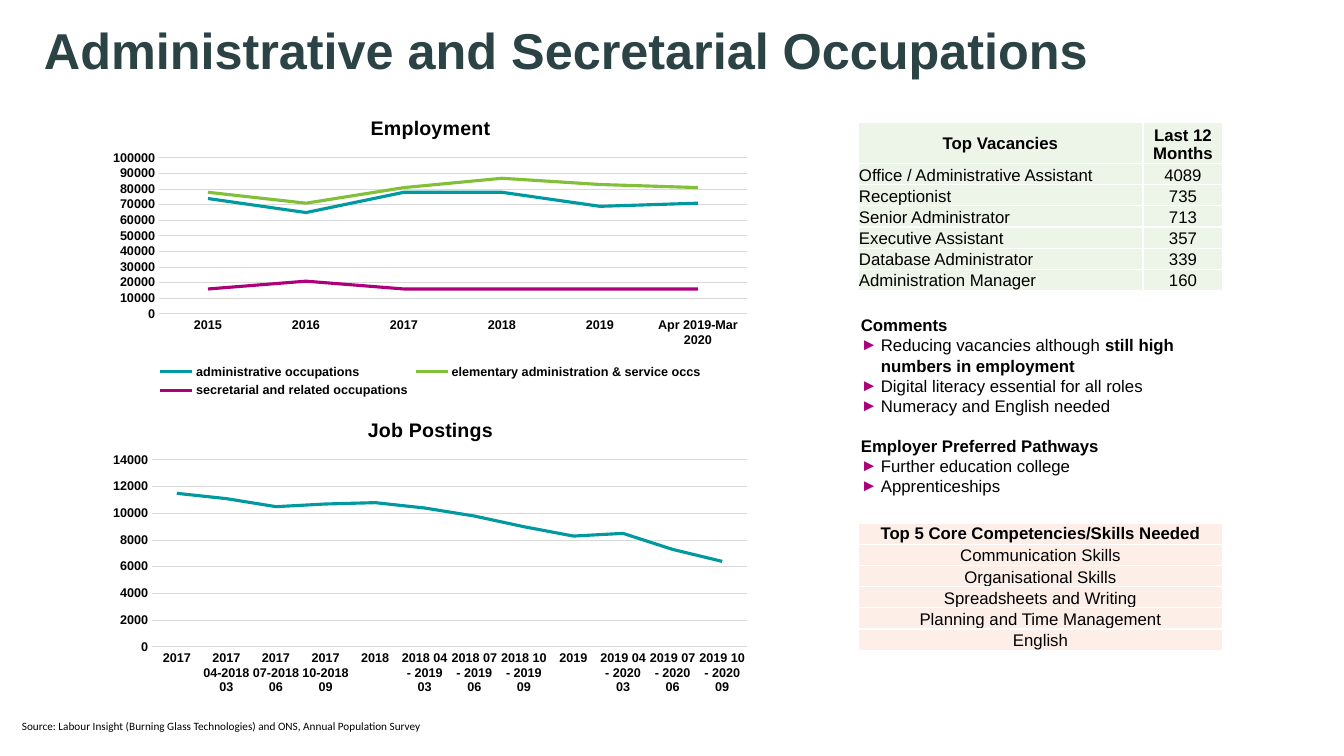
from lxml.etree import SubElement
from pptx import Presentation
from pptx.chart.data import CategoryChartData
from pptx.dml.color import RGBColor
from pptx.enum.chart import XL_CHART_TYPE, XL_LEGEND_POSITION, XL_TICK_MARK
from pptx.enum.text import MSO_ANCHOR, PP_ALIGN
from pptx.oxml import parse_xml
from pptx.oxml.ns import nsdecls, qn
from pptx.util import Pt

PX = 914400 / 100.8
COLOURS = {
    "title": "2B4345", "text": "000000", "teal": "0099A0", "green": "81C038",
    "magenta": "AD007A", "grid": "D9D9D9", "border": "FFFFFF",
    "vacancies": "EDF4E8", "skills": "FDEEE8",
}

TITLE = "Administrative and Secretarial Occupations"
SOURCE = "Source: Labour Insight (Burning Glass Technologies) and ONS, Annual Population Survey"

# Each run is (text, bold)
NOTES = [
    ("Comments", [
        [("Reducing vacancies although ", False), ("still high numbers in employment", True)],
        [("Digital literacy essential for all roles", False)],
        [("Numeracy and English needed", False)],
    ]),
    ("Employer Preferred Pathways", [
        [("Further education college", False)],
        [("Apprenticeships", False)],
    ]),
]

TABLES = [
    dict(at=(858, 122), widths=(285, 80), heading_height=41, fill="vacancies",
         aligns=(PP_ALIGN.LEFT, PP_ALIGN.CENTER),
         rows=[
             ("Top Vacancies", "Last 12 Months"),
             ("Office / Administrative Assistant", "4089"),
             ("Receptionist", "735"),
             ("Senior Administrator", "713"),
             ("Executive Assistant", "357"),
             ("Database Administrator", "339"),
             ("Administration Manager", "160"),
         ]),
    dict(at=(858, 523), widths=(365,), heading_height=21, fill="skills",
         aligns=(PP_ALIGN.CENTER,),
         rows=[
             ("Top 5 Core Competencies/Skills Needed",),
             ("Communication Skills",),
             ("Organisational Skills",),
             ("Spreadsheets and Writing",),
             ("Planning and Time Management",),
             ("English",),
         ]),
]

CHARTS = [
    dict(title="Employment", box=(100, 100, 661, 302), plot=(159, 158, 588, 156),
         maximum=100000, step=10000, legend=True,
         categories=["2015", "2016", "2017", "2018", "2019", "Apr 2019-Mar 2020"],
         series=[
             ("administrative occupations", "teal",
              (74000, 65000, 78000, 78000, 69000, 71000)),
             ("elementary administration & service occs", "green",
              (78000, 71000, 81000, 87000, 83000, 81000)),
             ("secretarial and related occupations", "magenta",
              (16000, 21000, 16000, 16000, 16000, 16000)),
         ]),
    dict(title="Job Postings", box=(100, 402, 661, 299), plot=(152, 460, 595, 187),
         maximum=14000, step=2000, legend=False,
         categories=["2017", "2017 04-2018 03", "2017 07-2018 06", "2017 10-2018 09",
                     "2018", "2018 04 - 2019 03", "2018 07 - 2019 06", "2018 10 - 2019 09",
                     "2019", "2019 04 - 2020 03", "2019 07 - 2020 06", "2019 10 - 2020 09"],
         series=[("Series 1", "teal",
                  (11500, 11100, 10500, 10700, 10800, 10400,
                   9800, 9000, 8300, 8500, 7300, 6400))]),
]


def emu(px):
    return round(px * PX)


def colour(name):
    return RGBColor.from_string(COLOURS[name])


def set_font(font, size, bold=False, name="Arial", tint="text"):
    for key, value in dict(size=Pt(size), bold=bold, name=name).items():
        setattr(font, key, value)
    font.color.rgb = colour(tint)


def add_run(paragraph, text, size, **style):
    run = paragraph.add_run()
    run.text = text
    set_font(run.font, size, **style)


def add_text_frame(slide, *box):
    frame = slide.shapes.add_textbox(*map(emu, box)).text_frame
    frame.word_wrap = True
    return frame


def add_bullet(paragraph):
    properties = paragraph._p.get_or_add_pPr()
    properties.set("marL", str(emu(20)))
    properties.set("indent", str(emu(-20)))
    tint = SubElement(properties, qn("a:buClr"))
    SubElement(tint, qn("a:srgbClr"), val=COLOURS["magenta"])
    SubElement(properties, qn("a:buFont"), typeface="Arial")
    SubElement(properties, qn("a:buChar"), char="►")


def add_notes(slide):
    frame = add_text_frame(slide, 851, 310, 372, 214)
    for index, (heading, points) in enumerate(NOTES):
        paragraph = frame.add_paragraph() if index else frame.paragraphs[0]
        if index:
            paragraph.space_before = Pt(14)
        add_run(paragraph, heading, 12, bold=True)
        for runs in points:
            paragraph = frame.add_paragraph()
            add_bullet(paragraph)
            for text, bold in runs:
                add_run(paragraph, text, 12, bold=bold)


def add_borders(cell):
    properties = cell._tc.get_or_add_tcPr()
    for side in "LRTB":
        line = SubElement(properties, qn(f"a:ln{side}"), w=str(Pt(1)))
        fill = SubElement(line, qn("a:solidFill"))
        SubElement(fill, qn("a:srgbClr"), val=COLOURS["border"])


def add_table(slide, at, widths, heading_height, fill, aligns, rows):
    heights = [heading_height] + [21] * (len(rows) - 1)
    box = (*at, sum(widths), sum(heights))
    table = slide.shapes.add_table(len(rows), len(widths), *map(emu, box)).table
    table.first_row = table.horz_banding = False
    for column, width in zip(table.columns, widths):
        column.width = emu(width)
    for r, (row, height) in enumerate(zip(rows, heights)):
        table.rows[r].height = emu(height)
        for c, text in enumerate(row):
            cell = table.cell(r, c)
            cell.margin_left = cell.margin_right = cell.margin_top = emu(1)
            cell.margin_bottom = 0
            cell.vertical_anchor = MSO_ANCHOR.BOTTOM if r or c else MSO_ANCHOR.MIDDLE
            add_borders(cell)
            cell.fill.solid()
            cell.fill.fore_color.rgb = colour(fill)
            paragraph = cell.text_frame.paragraphs[0]
            paragraph.alignment = aligns[c] if r else PP_ALIGN.CENTER
            add_run(paragraph, text, 12, bold=not r)


def place_plot(chart, box, plot):
    """Fix the inner plot area, given in slide px, inside the chart box."""
    left, top, width, height = box
    shares = dict(x=(plot[0] - left) / width, y=(plot[1] - top) / height,
                  w=plot[2] / width, h=plot[3] / height)
    modes = '<c:layoutTarget val="inner"/><c:xMode val="edge"/><c:yMode val="edge"/>'
    places = "".join(f'<c:{key} val="{share:.4f}"/>' for key, share in shares.items())
    area = chart._chartSpace.chart.plotArea
    for layout in area.findall(qn("c:layout")):
        area.remove(layout)
    area.insert(0, parse_xml(f'<c:layout {nsdecls("c")}><c:manualLayout>'
                             f'{modes}{places}</c:manualLayout></c:layout>'))


def style_line(line, tint, width):
    line.color.rgb = colour(tint)
    line.width = Pt(width)


def add_chart(slide, title, box, plot, maximum, step, legend, categories, series):
    data = CategoryChartData(number_format="General")
    data.categories = categories
    for name, _, values in series:
        data.add_series(name, values)
    chart = slide.shapes.add_chart(XL_CHART_TYPE.LINE, *map(emu, box), data).chart
    set_font(chart.font, 10, bold=True)
    add_run(chart.chart_title.text_frame.paragraphs[0], title, 14, bold=True)
    chart.chart_title.include_in_layout = False
    place_plot(chart, box, plot)

    value_axis, category_axis = chart.value_axis, chart.category_axis
    for axis in (value_axis, category_axis):
        axis.major_tick_mark = axis.minor_tick_mark = XL_TICK_MARK.NONE
        set_font(axis.tick_labels.font, 9, bold=True)
    for key, value in dict(minimum_scale=0, maximum_scale=maximum, major_unit=step).items():
        setattr(value_axis, key, value)
    value_axis.format.line.fill.background()
    style_line(value_axis.major_gridlines.format.line, "grid", 0.75)
    style_line(category_axis.format.line, "grid", 0.75)

    chart.plots[0].vary_by_categories = False
    for drawn, (_, tint, _) in zip(chart.plots[0].series, series):
        drawn.smooth = False
        style_line(drawn.format.line, tint, 2.25)

    chart.has_legend = legend
    if legend:
        chart.legend.position = XL_LEGEND_POSITION.BOTTOM
        chart.legend.include_in_layout = False
        set_font(chart.legend.font, 9, bold=True)


def main():
    presentation = Presentation()
    presentation.slide_width, presentation.slide_height = emu(1344), emu(756)
    slide = presentation.slides.add_slide(presentation.slide_layouts[6])

    title = add_text_frame(slide, 34, -20, 1276, 146)
    title.vertical_anchor = MSO_ANCHOR.MIDDLE
    title.paragraphs[0].line_spacing = 0.9
    add_run(title.paragraphs[0], TITLE, 36, bold=True, tint="title")

    for chart in CHARTS:
        add_chart(slide, **chart)
    for table in TABLES:
        add_table(slide, **table)
    add_notes(slide)
    source = add_text_frame(slide, 12, 714, 549, 37)
    add_run(source.paragraphs[0], SOURCE, 8, name="Calibri")
    presentation.save("out.pptx")


if __name__ == "__main__":
    main()
